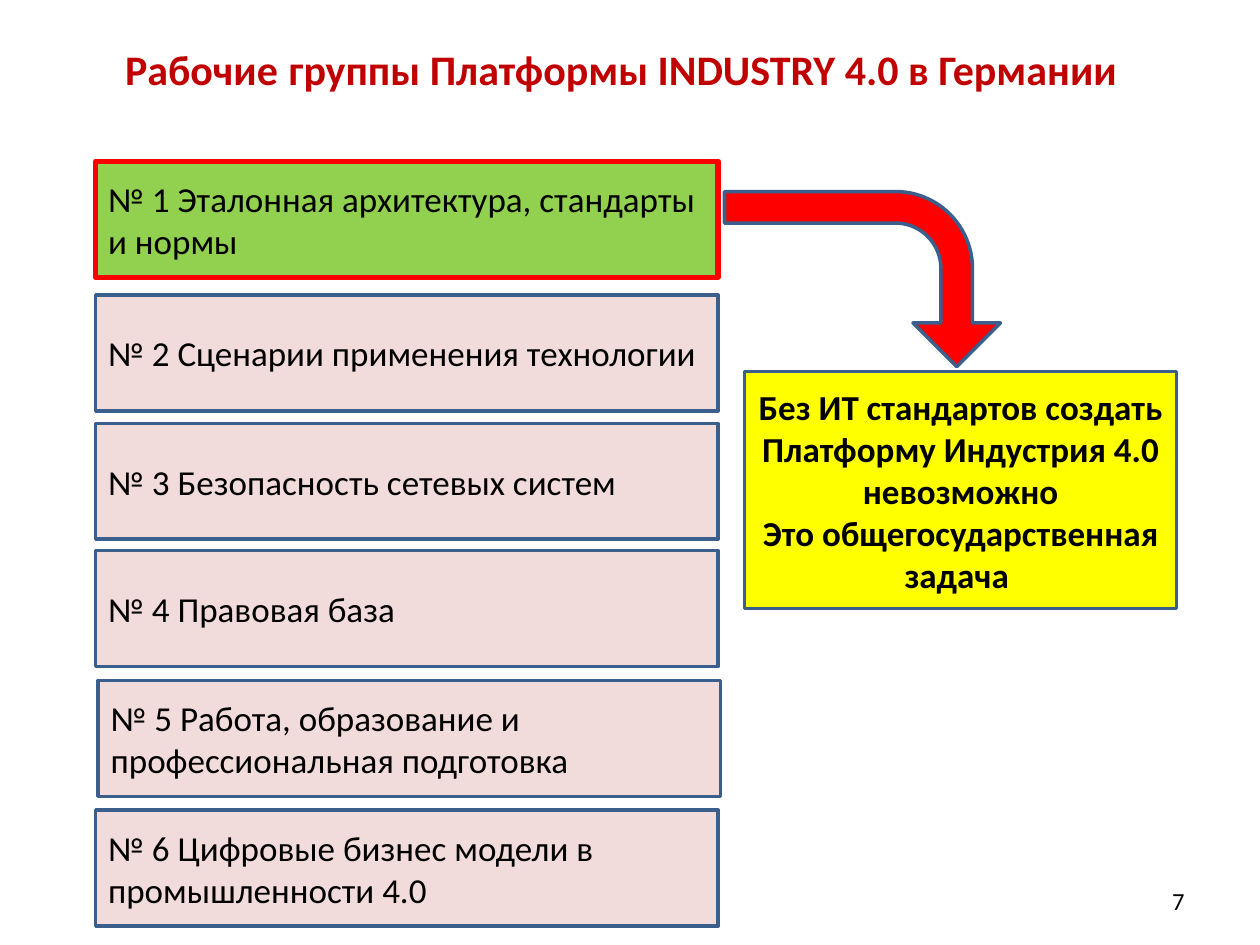
from dataclasses import dataclass

from pptx import Presentation
from pptx.dml.color import RGBColor
from pptx.enum.shapes import MSO_SHAPE
from pptx.enum.text import MSO_ANCHOR, PP_ALIGN
from pptx.util import Emu, Pt

RECTANGLE, BENT_ARROW = MSO_SHAPE.RECTANGLE, MSO_SHAPE.BENT_ARROW
LEFT, CENTER, RIGHT = PP_ALIGN.LEFT, PP_ALIGN.CENTER, PP_ALIGN.RIGHT
MIDDLE = MSO_ANCHOR.MIDDLE
EMU_PER_PX = 9144
FONT = "Calibri"
BLACK, DARK_RED, RED = "000000", "C00000", "FF0000"
GREEN, PINK, YELLOW, BLUE = "92D050", "F2DCDB", "FFFF00", "3A5F8C"


@dataclass
class Area:
    left: int
    top: int
    width: int
    height: int

    def emu(self) -> list[Emu]:
        return [px(n) for n in (self.left, self.top, self.width, self.height)]


@dataclass
class Span:
    text: str
    size: int = 20
    bold: bool = False
    color: str = BLACK


@dataclass
class Group:
    text: str
    top: int
    left: int = 76
    fill: str = PINK
    line: str = BLUE
    line_width: int = 2


def px(length: int) -> Emu:
    return Emu(length * EMU_PER_PX)


def rgb(color: str) -> RGBColor:
    return RGBColor.from_string(color)


def write(shape, paragraphs: list[list[Span]], align) -> None:
    frame = shape.text_frame
    frame.word_wrap = True
    frame.vertical_anchor = MIDDLE
    for index, spans in enumerate(paragraphs):
        para = frame.add_paragraph() if index else frame.paragraphs[0]
        para.alignment = align
        for span in spans:
            run = para.add_run()
            run.text = span.text
            run.font.name = FONT
            run.font.size = Pt(span.size)
            run.font.bold = span.bold
            run.font.color.rgb = rgb(span.color)


def draw_text(page, area: Area, spans: list[Span], align) -> None:
    write(page.shapes.add_textbox(*area.emu()), [spans], align)


def draw_shape(page, kind, area: Area, fill: str, line: str = BLUE, line_width: int = 2):
    shape = page.shapes.add_shape(kind, *area.emu())
    shape.shadow.inherit = False
    shape.fill.solid()
    shape.fill.fore_color.rgb = rgb(fill)
    shape.line.color.rgb = rgb(line)
    shape.line.width = Pt(line_width)
    return shape


def draw_group(page, group: Group) -> None:
    area = Area(group.left, group.top, 494, 92)
    box = draw_shape(page, RECTANGLE, area, group.fill, group.line, group.line_width)
    write(box, [[Span(group.text)]], LEFT)


def draw_arrow(page, area: Area) -> None:
    arrow = draw_shape(page, BENT_ARROW, area, RED)
    arrow.rotation = 90
    for index, value in enumerate((0.18, 0.25, 0.25, 0.44)):
        arrow.adjustments[index] = value


GROUPS = [
    Group("№ 1 Эталонная архитектура, стандарты и нормы", 128, fill=GREEN, line=RED, line_width=3),
    Group("№ 2 Сценарии применения технологии", 234),
    Group("№ 3 Безопасность сетевых систем", 336),
    Group("№ 4 Правовая база", 437),
    Group("№ 5 Работа, образование и профессиональная подготовка", 540, left=78),
    Group("№ 6 Цифровые бизнес модели в промышленности 4.0", 643),
]
TITLE = [
    Span("Рабочие", 24, True, DARK_RED),
    Span(" ", 27, True, DARK_RED),
    Span("группы Платформы INDUSTRY 4.0 в Германии", 24, True, DARK_RED),
]
CONCLUSION = [
    [Span("Без ИТ стандартов создать Платформу Индустрия 4.0 невозможно", bold=True)],
    [Span("Это общегосударственная задача ", bold=True)],
]


def main() -> None:
    deck = Presentation()
    deck.slide_width, deck.slide_height = px(1000), px(750)
    page = deck.slides.add_slide(deck.slide_layouts[6])
    draw_text(page, Area(717, 695, 233, 40), [Span("7", 14)], RIGHT)
    draw_text(page, Area(35, 11, 916, 84), TITLE, CENTER)
    for group in GROUPS:
        draw_group(page, group)
    draw_arrow(page, Area(615, 112, 139, 219))
    conclusion = draw_shape(page, RECTANGLE, Area(591, 295, 343, 188), YELLOW)
    write(conclusion, CONCLUSION, CENTER)
    deck.save("out.pptx")


if __name__ == "__main__":
    main()
